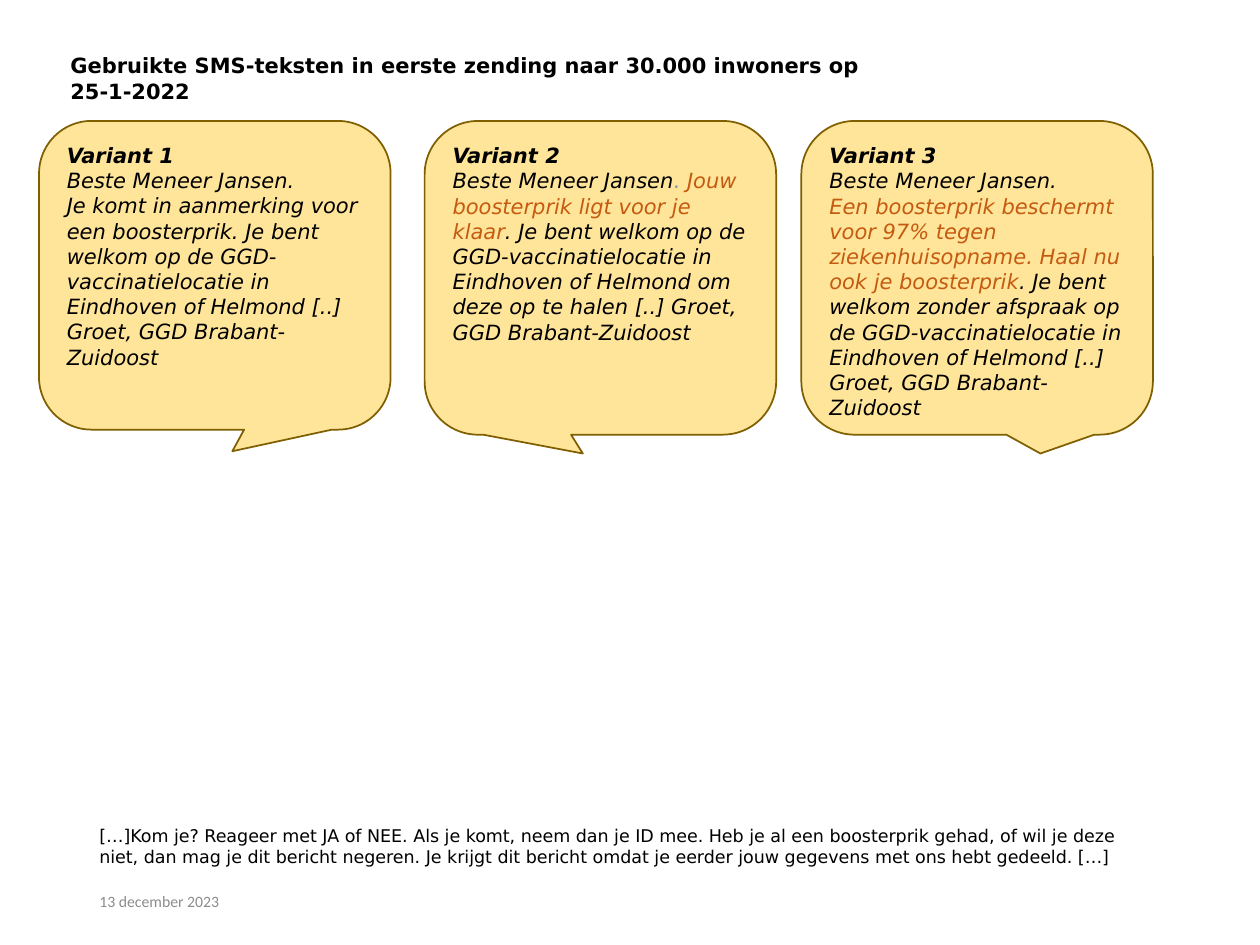
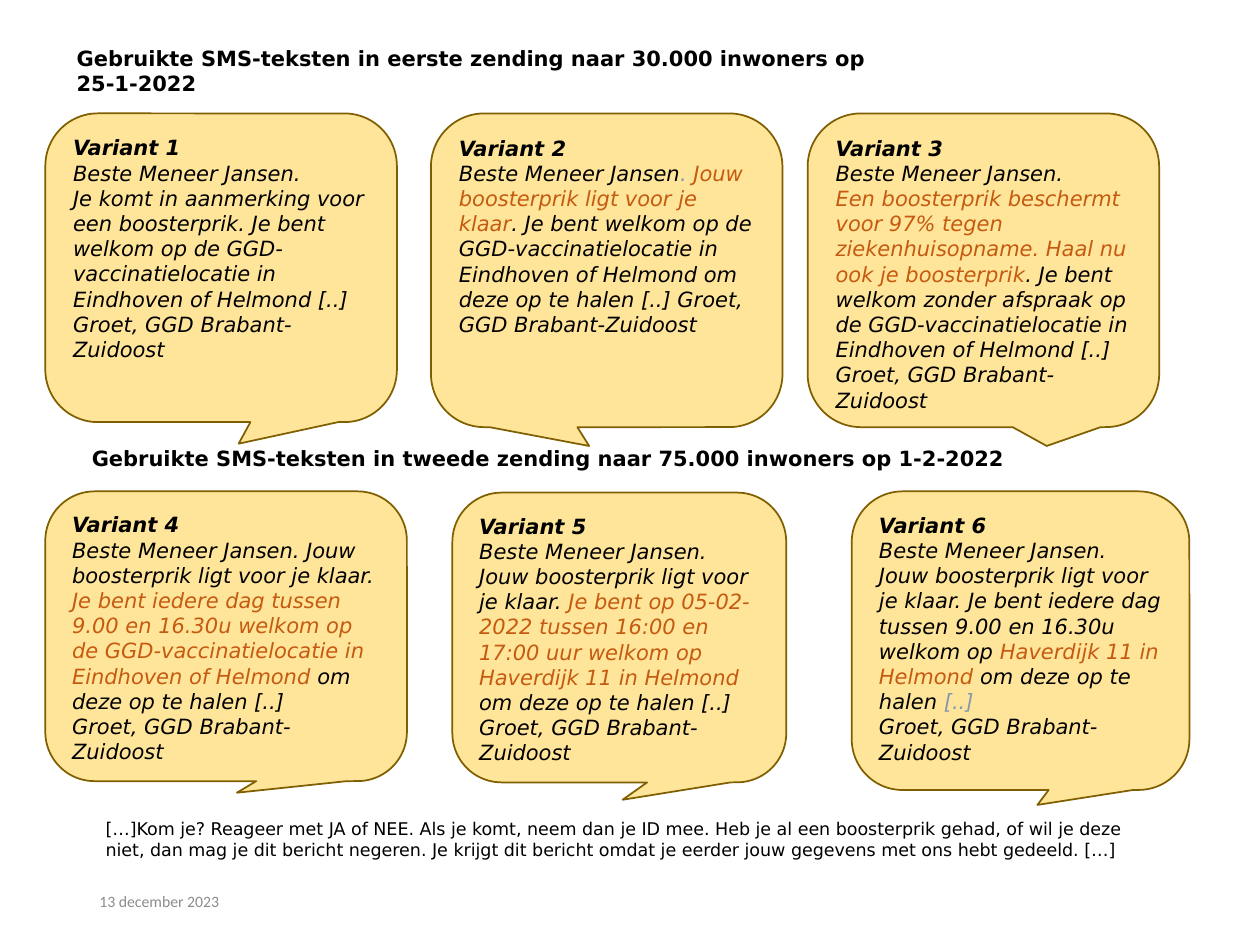
from dataclasses import dataclass

from pptx import Presentation
from pptx.dml.color import RGBColor
from pptx.enum.shapes import MSO_SHAPE
from pptx.enum.text import MSO_ANCHOR, PP_ALIGN
from pptx.slide import Slide
from pptx.text.text import TextFrame
from pptx.util import Inches, Pt

COLORS = {
    "text": "000000",
    "accent": "C55A11",
    "muted": "8497B0",
    "date": "8C8C8C",
    "bubble": "FFE599",
    "outline": "7F5F00",
}
HEADING = {"name": "DejaVu Sans", "size": Pt(12), "bold": True}
VARIANT_TITLE = {**HEADING, "italic": True}
MESSAGE = {**VARIANT_TITLE, "bold": False}
NOTE = {"name": "DejaVu Sans", "size": Pt(10)}
DATE = {"name": "Calibri", "size": Pt(9)}


@dataclass(frozen=True)
class Phrase:
    text: str
    color: str = "text"


@dataclass(frozen=True)
class Box:
    left: float
    top: float
    width: float
    height: float

    def shifted(self, dx: float, dy: float) -> "Box":
        return Box(self.left + dx, self.top + dy, self.width, self.height)

    def lengths(self) -> tuple[Inches, ...]:
        return tuple(Inches(v) for v in (self.left, self.top, self.width, self.height))


@dataclass(frozen=True)
class Bubble:
    title: str
    box: Box
    tail: tuple[float, float]
    message: tuple[Phrase, ...]


SIGN_OFF = "Groet, GGD Brabant-Zuidoost"
READY = "Jouw boosterprik ligt voor je klaar"

FIRST_MAILING = (
    Bubble("Variant 1", Box(0.31, 0.96, 2.79, 2.45), (0.05, 0.57), (
        Phrase("Beste Meneer Jansen.\nJe komt in aanmerking voor een boosterprik. "
               "Je bent welkom op de GGD-vaccinatielocatie in Eindhoven of Helmond [..]\n"
               + SIGN_OFF),
    )),
    Bubble("Variant 2", Box(3.37, 0.96, 2.79, 2.49), (-0.05, 0.56), (
        Phrase("Beste Meneer Jansen"),
        Phrase(". ", "muted"),
        Phrase(READY, "accent"),
        Phrase(". Je bent welkom op de GGD-vaccinatielocatie in Eindhoven of Helmond "
               "om deze op te halen [..] " + SIGN_OFF),
    )),
    Bubble("Variant 3", Box(6.36, 0.96, 2.79, 2.49), (0.18, 0.56), (
        Phrase("Beste Meneer Jansen.\n"),
        Phrase("Een boosterprik beschermt voor 97% tegen ziekenhuisopname. "
               "Haal nu ook je boosterprik", "accent"),
        Phrase(". Je bent welkom zonder afspraak op de GGD-vaccinatielocatie "
               "in Eindhoven of Helmond [..]\n" + SIGN_OFF),
    )),
)

SECOND_MAILING = (
    Bubble("Variant 4", Box(0.36, 3.9, 2.87, 2.3), (0.03, 0.54), (
        Phrase(f"Beste Meneer Jansen. {READY}. "),
        Phrase("Je bent iedere dag tussen 9.00 en 16.30u welkom op de "
               "GGD-vaccinatielocatie in Eindhoven of Helmond ", "accent"),
        Phrase("om deze op te halen [..]\n" + SIGN_OFF),
    )),
    Bubble("Variant 5", Box(3.59, 3.91, 2.65, 2.3), (0.01, 0.56), (
        Phrase(f"Beste Meneer Jansen. {READY}. "),
        Phrase("Je bent op 05-02-2022 tussen 16:00 en 17:00 uur welkom op "
               "Haverdijk 11 in Helmond ", "accent"),
        Phrase("om deze op te halen [..] " + SIGN_OFF),
    )),
    Bubble("Variant 6", Box(6.76, 3.9, 2.68, 2.37), (0.05, 0.55), (
        Phrase(f"Beste Meneer Jansen.\n{READY}. "
               "Je bent iedere dag tussen 9.00 en 16.30u welkom op "),
        Phrase("Haverdijk 11 in Helmond ", "accent"),
        Phrase("om deze op te halen "),
        Phrase("[..]\n", "muted"),
        Phrase(SIGN_OFF),
    )),
)

FIRST_HEADING = "Gebruikte SMS-teksten in eerste zending naar 30.000 inwoners op 25-1-2022"
SECOND_HEADING = "Gebruikte SMS-teksten in tweede zending naar 75.000 inwoners op 1-2-2022"
CLOSING_NOTE = (
    "[…]Kom je? Reageer met JA of NEE. Als je komt, neem dan je ID mee. "
    "Heb je al een boosterprik gehad, of wil je deze niet, dan mag je dit bericht negeren. "
    "Je krijgt dit bericht omdat je eerder jouw gegevens met ons hebt gedeeld. […]"
)


def rgb(color: str) -> RGBColor:
    return RGBColor.from_string(COLORS[color])


def write(tf: TextFrame, phrase: Phrase, font: dict) -> None:
    p = tf.paragraphs[0]
    for i, line in enumerate(phrase.text.split("\n")):
        if i:
            p.add_line_break()
        if line:
            r = p.add_run()
            r.text = line
            for name, value in font.items():
                setattr(r.font, name, value)
            r.font.color.rgb = rgb(phrase.color)


def add_text(s: Slide, box: Box, phrase: Phrase, font: dict,
             anchor: MSO_ANCHOR = MSO_ANCHOR.TOP) -> None:
    tf = s.shapes.add_textbox(*box.lengths()).text_frame
    tf.word_wrap = True
    tf.vertical_anchor = anchor
    write(tf, phrase, font)


def add_bubble(s: Slide, bubble: Bubble, dx: float = 0, dy: float = 0) -> None:
    sp = s.shapes.add_shape(MSO_SHAPE.ROUNDED_RECTANGULAR_CALLOUT,
                            *bubble.box.shifted(dx, dy).lengths())
    for i, value in enumerate((*bubble.tail, 0.17)):
        sp.adjustments[i] = value
    sp.shadow.inherit = False
    sp.fill.solid()
    sp.fill.fore_color.rgb = rgb("bubble")
    sp.line.color.rgb = rgb("outline")
    sp.line.width = Pt(1)
    tf = sp.text_frame
    tf.word_wrap = True
    tf.vertical_anchor = MSO_ANCHOR.TOP
    tf.paragraphs[0].alignment = PP_ALIGN.LEFT
    write(tf, Phrase(bubble.title + "\n"), VARIANT_TITLE)
    for phrase in bubble.message:
        write(tf, phrase, MESSAGE)


def add_mailing_slide(prs: Presentation, dx: float = 0, dy: float = 0) -> Slide:
    s = prs.slides.add_slide(prs.slide_layouts[6])
    add_text(s, Box(0.69, 6.95, 2.25, 0.4), Phrase("13 december 2023", "date"),
             DATE, MSO_ANCHOR.MIDDLE)
    for bubble in FIRST_MAILING:
        add_bubble(s, bubble, dx, dy)
    add_text(s, Box(0.46, 0.37, 6.69, 0.71).shifted(dx, dy), Phrase(FIRST_HEADING), HEADING)
    add_text(s, Box(0.69, 6.5, 8.34, 0.61).shifted(dx, dy), Phrase(CLOSING_NOTE), NOTE)
    return s


def main() -> None:
    prs = Presentation()
    prs.slide_width, prs.slide_height = Inches(10), Inches(7.5)
    add_mailing_slide(prs)
    s = add_mailing_slide(prs, 0.05, -0.06)
    for bubble in SECOND_MAILING:
        add_bubble(s, bubble)
    add_text(s, Box(0.63, 3.49, 7.52, 0.3), Phrase(SECOND_HEADING), HEADING)
    prs.save("out.pptx")


if __name__ == "__main__":
    main()
